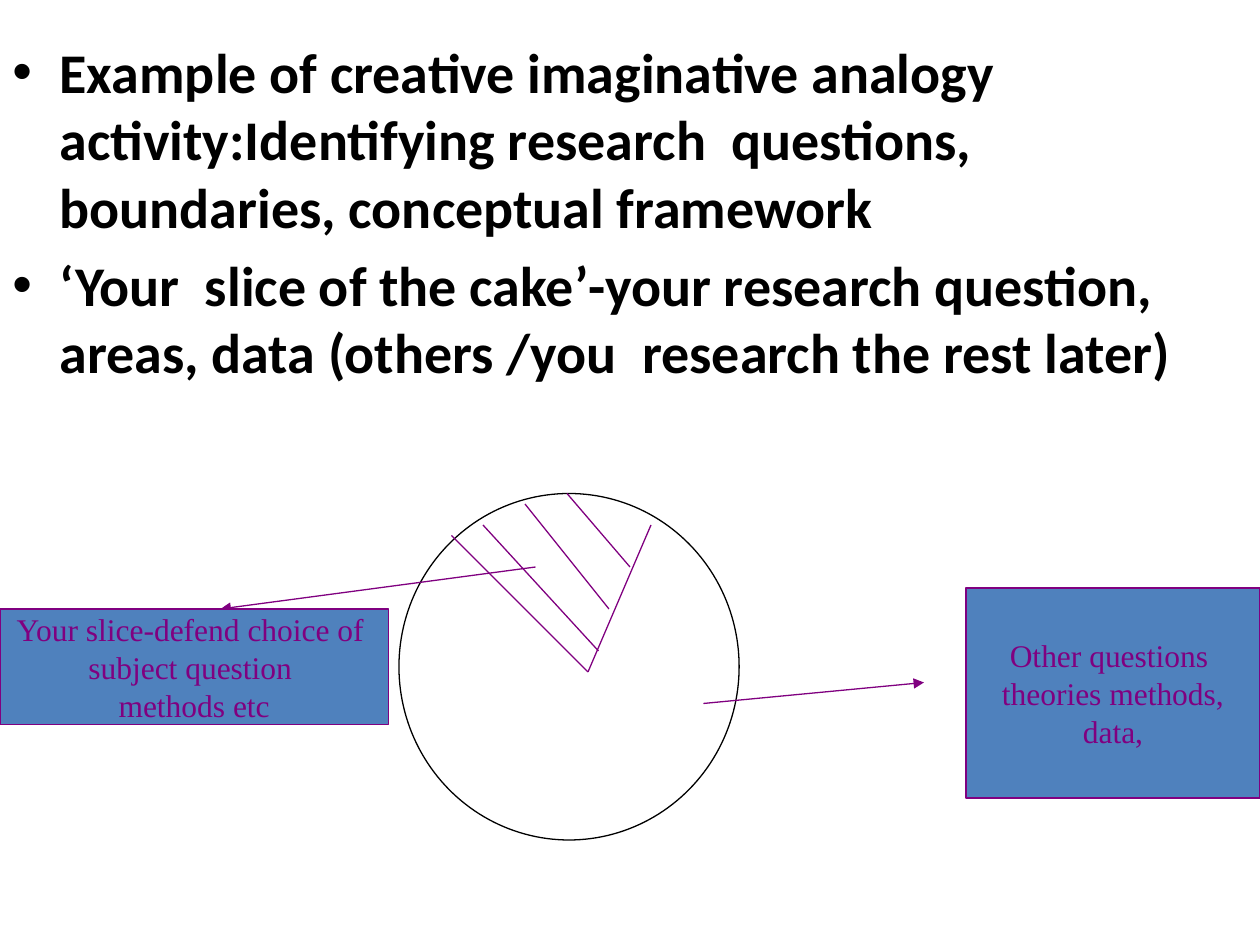
from dataclasses import dataclass

from lxml.etree import SubElement
from pptx import Presentation
from pptx.dml.color import RGBColor
from pptx.enum.shapes import MSO_CONNECTOR, MSO_SHAPE
from pptx.enum.text import MSO_ANCHOR, PP_ALIGN
from pptx.oxml.ns import qn
from pptx.util import Pt

SCALE = 7620


@dataclass(frozen=True)
class Theme:
    ink: RGBColor = RGBColor(0, 0, 0)
    paper: RGBColor = RGBColor(255, 255, 255)
    panel: RGBColor = RGBColor(0x4F, 0x81, 0xBD)
    accent: RGBColor = RGBColor(0x80, 0, 0x80)
    body: str = "Calibri"
    label: str = "Times New Roman"
    large: Pt = Pt(32)
    small: Pt = Pt(18)
    gap: Pt = Pt(6.4)
    stroke: Pt = Pt(0.75)


THEME = Theme()


def px(*sizes):
    return [size * SCALE for size in sizes]


def set_font(para, name, size, color, bold=False):
    for run in para.runs:
        font = run.font
        font.name, font.size, font.bold = name, size, bold
        font.color.rgb = color


def add_form(slide, kind, box, fill, line):
    form = slide.shapes.add_shape(kind, *px(*box))
    form.shadow.inherit = False
    form.fill.solid()
    form.fill.fore_color.rgb = fill
    form.line.color.rgb = line
    form.line.width = THEME.stroke
    return form


def add_line(slide, box, start, end, arrow=False):
    left, top = box[:2]
    ends = px(left + start[0], top + start[1], left + end[0], top + end[1])
    line = slide.shapes.add_connector(MSO_CONNECTOR.STRAIGHT, *ends)
    line.line.color.rgb = THEME.accent
    line.line.width = THEME.stroke
    if arrow:
        SubElement(line.line._get_or_add_ln(), qn("a:tailEnd"), type="triangle")
    SubElement(line._element.spPr, qn("a:effectLst"))


def add_points(slide, box, points):
    frame = slide.shapes.add_textbox(*px(*box)).text_frame
    frame.word_wrap = True
    frame.text = "\n".join(points)
    indent = px(45)[0]
    for para in frame.paragraphs:
        para.space_before = THEME.gap
        set_font(para, THEME.body, THEME.large, THEME.ink, True)
        props = para._p.get_or_add_pPr()
        props.set("marL", str(indent))
        props.set("indent", str(-indent))
        SubElement(props, qn("a:buFont"), typeface="Arial")
        SubElement(props, qn("a:buChar"), char="•")


def add_cake(slide, box):
    add_form(slide, MSO_SHAPE.OVAL, box, THEME.paper, THEME.ink)
    tip = (180, 170)
    edges = [((50, 40), tip), (tip, (240, 30))]
    hatch = [((160, 0), (220, 70)), ((120, 10), (200, 110)), ((80, 30), (190, 150))]
    for start, end in edges + hatch:
        add_line(slide, box, start, end)
    add_line(slide, box, (290, 200), (500, 180), True)
    add_line(slide, box, (130, 70), (-170, 110), True)


def add_label(slide, box, lines):
    form = add_form(slide, MSO_SHAPE.RECTANGLE, box, THEME.panel, THEME.accent)
    frame = form.text_frame
    frame.word_wrap = False
    frame.vertical_anchor = MSO_ANCHOR.MIDDLE
    frame.text = "\n".join(lines)
    for para in frame.paragraphs:
        para.alignment = PP_ALIGN.CENTER
        set_font(para, THEME.label, THEME.small, THEME.accent)


def main():
    deck = Presentation()
    deck.slide_width, deck.slide_height = px(1200, 900)
    slide = deck.slides.add_slide(deck.slide_layouts[6])
    add_points(slide, (0, 30, 1200, 870), [
        "Example of creative imaginative analogy activity:Identifying research  questions, "
        "boundaries, conceptual framework",
        "‘Your  slice of the cake’-your research question, areas, data "
        "(others /you  research the rest later)",
    ])
    add_cake(slide, (380, 470, 324, 330))
    add_label(slide, (920, 560, 280, 200),
              ["Other questions ", "theories methods,", "data,"])
    add_label(slide, (0, 580, 370, 110),
              ["Your slice-defend choice of ", "subject question ", "methods etc"])
    deck.save("out.pptx")


if __name__ == "__main__":
    main()
